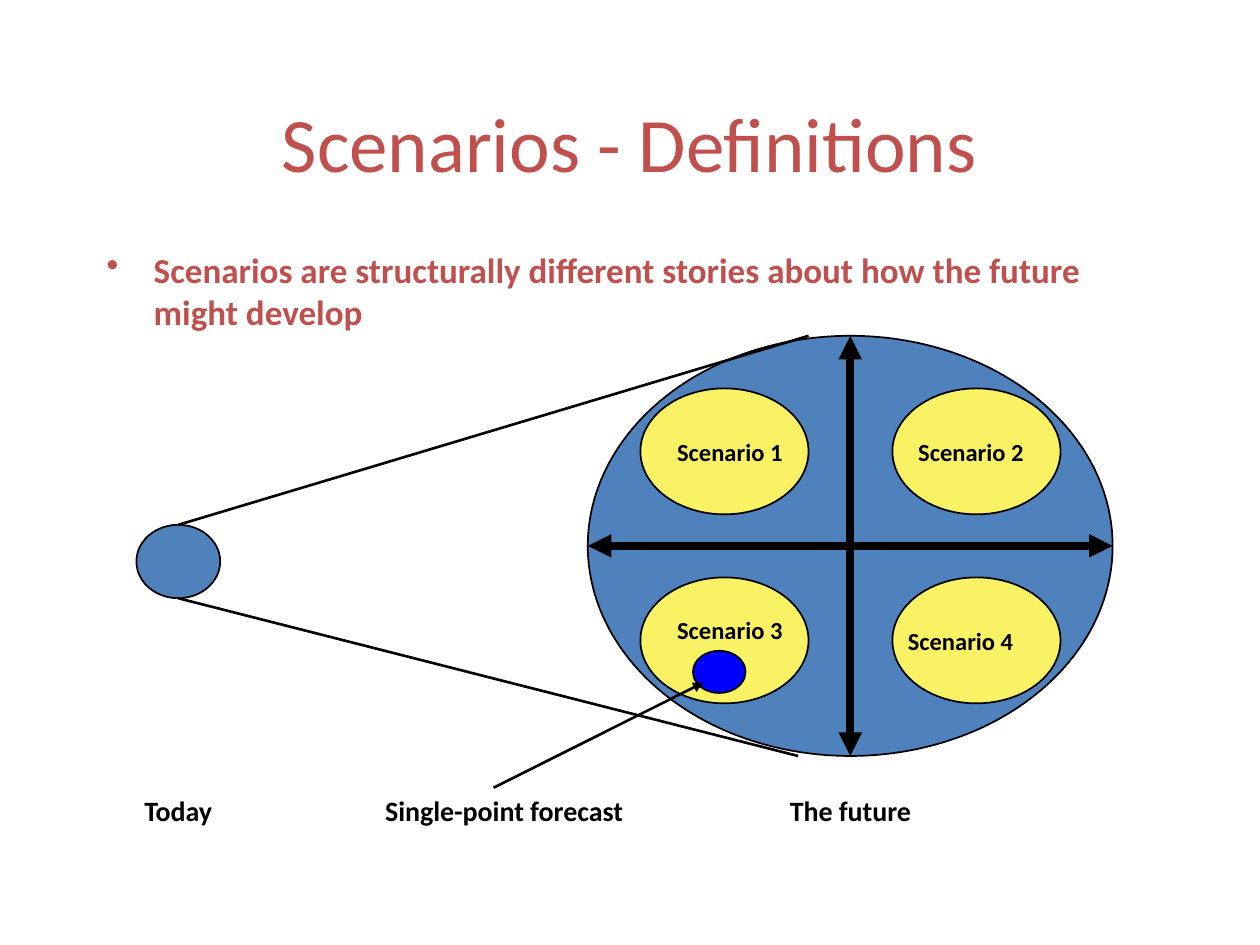
from lxml import etree
from pptx import Presentation
from pptx import util as u
from pptx.dml.color import RGBColor
from pptx.enum import shapes, text
from pptx.oxml.ns import qn

FONT = "Calibri"
RED, BLUE, YELLOW, DOT, BLACK = "C0504D", "4F81BD", "F9F265", "0000FF", "000000"

# Text and places: left, top, width, height in cm
TITLE = ("Scenarios - Definitions", (1.9, 1.27, 21.59, 3.18))
BODY = ("Scenarios are structurally different stories about how the future "
        "might develop", (1.9, 4.88, 21.59, 5.5))
LABELS = [
    ("Today", 1.69, 3.81),
    ("Single-point forecast", 7.2, 5.93),
    ("The future", 15.24, 3.81),
]
NAMES = [
    ("Scenario 1", 13.34, 8.68),
    ("Scenario 2", 18.2, 8.68),
    ("Scenario 3", 13.34, 12.28),
    ("Scenario 4", 17.99, 12.49),
]
TODAY = (2.75, 10.58, 1.69, 1.48)
FUTURE = (11.85, 6.77, 10.58, 8.47)
POINT = (13.97, 13.12, 1.06, 0.85)
GRID = (12.91, 7.83, 3.39, 2.54)
STEP_X, STEP_Y = 5.08, 3.81
LABEL_Y = 15.88


def rgb(code):
    return RGBColor.from_string(code)


def cm(*vals):
    return [u.Cm(v) for v in vals]


def write(slide, words, box, size, color=BLACK, bold=True,
          align=text.PP_ALIGN.CENTER, anchor=text.MSO_ANCHOR.TOP):
    frame = slide.shapes.add_textbox(*cm(*box)).text_frame
    frame.word_wrap = True
    frame.vertical_anchor = anchor
    para = frame.paragraphs[0]
    para.text = words
    para.alignment = align
    font = para.font
    font.name, font.size, font.bold = FONT, u.Pt(size), bold
    font.color.rgb = rgb(color)
    return para


def bullet(para, indent):
    props = para._p.get_or_add_pPr()
    props.set("marL", str(u.Cm(indent)))
    props.set("indent", str(-u.Cm(indent)))
    mark = etree.Element(qn("a:buChar"), char="•")
    props.insert_element_before(mark, "a:tabLst", "a:defRPr", "a:extLst")


def oval(slide, box, fill):
    shape = slide.shapes.add_shape(shapes.MSO_SHAPE.OVAL, *cm(*box))
    shape.shadow.inherit = False
    shape.fill.solid()
    shape.fill.fore_color.rgb = rgb(fill)
    shape.line.color.rgb = rgb(BLACK)
    shape.line.width = u.Pt(1)


def line(slide, start, end, width, heads=()):
    """Draw a line; heads may name headEnd (start) and tailEnd (end)."""
    link = slide.shapes.add_connector(
        shapes.MSO_CONNECTOR.STRAIGHT, *cm(*start, *end))
    link.line.color.rgb = rgb(BLACK)
    link.line.width = u.Pt(width)
    for head in heads:
        etree.SubElement(link.line._get_or_add_ln(), qn("a:" + head),
                         type="triangle")
    etree.SubElement(link._element.spPr, qn("a:effectLst"))


def main():
    deck = Presentation()
    deck.slide_width, deck.slide_height = cm(25.4, 19.05)
    slide = deck.slides.add_slide(deck.slide_layouts[6])

    write(slide, *TITLE, 44, RED, bold=False, anchor=text.MSO_ANCHOR.MIDDLE)
    bullet(write(slide, *BODY, 20, RED, align=text.PP_ALIGN.LEFT), 0.95)

    oval(slide, FUTURE, BLUE)
    oval(slide, TODAY, BLUE)
    left, top, wide, high = FUTURE
    right, base = left + wide, top + high
    mid_x, mid_y = left + wide / 2, top + high / 2
    now_x, now_y = TODAY[0] + TODAY[2] / 2, TODAY[1]
    line(slide, (now_x, now_y), (16.3, top), 1.5)
    line(slide, (now_x, now_y + TODAY[3]), (16.09, base), 1.5)

    x, y, w, h = GRID
    for row in range(2):
        for col in range(2):
            oval(slide, (x + col * STEP_X, y + row * STEP_Y, w, h), YELLOW)

    both = ("headEnd", "tailEnd")
    line(slide, (mid_x, top), (mid_x, base), 4.5, both)
    line(slide, (left, mid_y), (right, mid_y), 4.5, both)

    oval(slide, POINT, DOT)
    line(slide, (14.18, 13.76), (9.95, LABEL_Y), 1.5, ["headEnd"])

    for words, x, w in LABELS:
        write(slide, words, (x, LABEL_Y, w, 0.94), 16)
    for words, x, y in NAMES:
        write(slide, words, (x, y, 2.75, 0.85), 14)

    deck.save("out.pptx")


if __name__ == "__main__":
    main()
